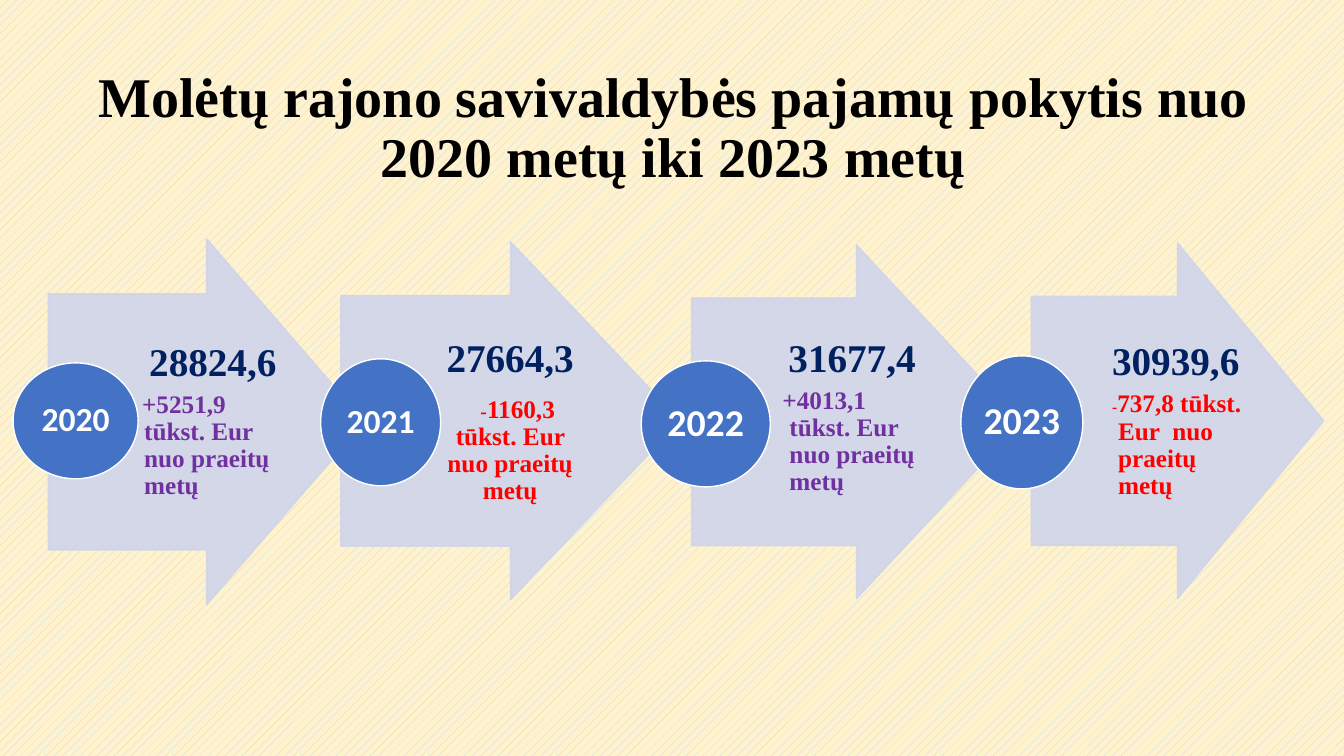
from typing import NamedTuple

import pptx
import pptx.dml.color
import pptx.enum.dml
import pptx.enum.shapes
import pptx.enum.text
import pptx.oxml
import pptx.oxml.ns
import pptx.util

Inches = pptx.util.Inches
Pt = pptx.util.Pt
Align = pptx.enum.text.PP_ALIGN
Kind = pptx.enum.shapes.MSO_SHAPE
Box = tuple[float, float, float, float]
SERIF = "Times New Roman"
UP, DOWN = "7030A0", "FF0000"


class Dent(NamedTuple):
    left: float = 0
    first: float = 0


class Step(NamedTuple):
    year: str
    size: int
    total: str
    sign: str
    change: str
    tone: str
    mark: int
    arrow: Box
    body: Box
    disc: Box
    inset: Box
    head: Dent
    note: Dent
    align: Align
    gap: int


STEPS = [
    Step("2020", 24, "28824,6", "+", "5251,9 tūkst. Eur nuo praeitų metų", UP, 18,
         (0.48, 2.37, 3.14, 3.63), (1.27, 2.91, 1.53, 2.54), (0.13, 3.6, 1.24, 1.15),
         (0.04, 0.01, 0.02, 0.01), Dent(0.17), Dent(0.12, -0.02), Align.LEFT, 5),
    Step("2021", 24, "27664,3", "-", "1160,3 tūkst. Eur nuo praeitų metų", DOWN, 14,
         (3.38, 2.4, 3.37, 3.55), (4.22, 2.94, 1.64, 2.49), (3.18, 3.56, 1.19, 1.26),
         (0.08, 0.02, 0.04, 0.02), Dent(), Dent(0, 0.15), Align.CENTER, 11),
    Step("2022", 27, "31677,4", "+", "4013,1 tūkst. Eur nuo praeitų metų", UP, 18,
         (6.86, 2.43, 3.27, 3.51), (7.67, 2.95, 1.59, 2.46), (6.36, 3.58, 1.28, 1.25),
         (0.04, 0.01, 0.02, 0.09), Dent(0.11), Dent(0.12, -0.07), Align.LEFT, 5),
    Step("2023", 27, "30939,6", "-", "737,8 tūkst. Eur  nuo praeitų metų", DOWN, 11,
         (10.23, 2.41, 2.9, 3.53), (10.95, 2.94, 1.41, 2.47), (9.53, 3.53, 1.21, 1.32),
         (0.08, 0.02, 0.04, 0.02), Dent(), Dent(0.06, -0.06), Align.LEFT, 5),
]


def color(code: str) -> pptx.dml.color.RGBColor:
    return pptx.dml.color.RGBColor.from_string(code)


def style(run, size: int, code: str, face: str = SERIF) -> None:
    font = run.font
    font.size, font.name, font.bold = Pt(size), face, True
    font.color.rgb = color(code)


def place(box: Box) -> list[int]:
    return [Inches(n) for n in box]


def setup(frame, inset: Box) -> None:
    frame.word_wrap = True
    frame.vertical_anchor = pptx.enum.text.MSO_ANCHOR.MIDDLE
    (frame.margin_left, frame.margin_top,
     frame.margin_right, frame.margin_bottom) = place(inset)


def indent(para, dent: Dent) -> None:
    props = para._p.get_or_add_pPr()
    props.set("marL", str(Inches(dent.left)))
    props.set("indent", str(Inches(dent.first)))


def shape(slide, kind: Kind, box: Box, fill: str, line: str):
    item = slide.shapes.add_shape(kind, *place(box))
    item.shadow.inherit = False
    item.fill.solid()
    item.fill.fore_color.rgb = color(fill)
    item.line.color.rgb = color(line)
    item.line.width = Pt(1)
    return item


def arrow(slide, box: Box) -> None:
    item = shape(slide, Kind.RIGHT_ARROW, box, "CFD5EA", "CFD5EA")
    item.adjustments[0], item.adjustments[1] = 0.7, 0.5
    for tone in item._element.spPr.iter(pptx.oxml.ns.qn("a:srgbClr")):
        alpha = pptx.oxml.parse_xml(
            f'<a:alpha {pptx.oxml.ns.nsdecls("a")} val="90000"/>')
        tone.append(alpha)


def body(slide, step: Step) -> None:
    frame = slide.shapes.add_textbox(*place(step.body)).text_frame
    setup(frame, step.inset)
    head, note = frame.paragraphs[0], frame.add_paragraph()
    head.text = step.total
    style(head.runs[0], 28, "002060")
    for text, size in ((step.sign, step.mark), (step.change, 18)):
        run = note.add_run()
        run.text = text
        style(run, size, step.tone)
    for para, dent in ((head, step.head), (note, step.note)):
        para.alignment = step.align
        para.line_spacing = 0.9
        indent(para, dent)
    head.space_after = Pt(step.gap)


def disc(slide, step: Step) -> None:
    frame = shape(slide, Kind.OVAL, step.disc, "4472C4", "FFFFFF").text_frame
    setup(frame, (0.02, 0.02, 0.02, 0.02))
    frame.text = step.year
    para = frame.paragraphs[0]
    para.alignment = Align.CENTER
    para.line_spacing = 0.9
    style(para.runs[0], step.size, "FFFFFF", "Calibri")


def title(slide, text: str) -> None:
    item = slide.shapes.title
    item.left, item.top, item.width, item.height = place((0.53, 0.4, 12.29, 1.77))
    frame = item.text_frame
    frame.text = text
    setup(frame, (0.1, 0.05, 0.1, 0.05))
    para = frame.paragraphs[0]
    para.alignment = Align.CENTER
    para.line_spacing = 0.9
    style(para.runs[0], 40, "000000")


def main() -> None:
    deck = pptx.Presentation()
    deck.slide_width, deck.slide_height = Inches(13.33), Inches(7.5)
    slide = deck.slides.add_slide(deck.slide_layouts[5])
    fill = slide.background.fill
    fill.patterned()
    fill.pattern = pptx.enum.dml.MSO_PATTERN.PERCENT_20
    fill.fore_color.rgb = color("BDD7EE")
    fill.back_color.rgb = color("FFF2CC")
    title(slide, "Molėtų rajono savivaldybės pajamų pokytis nuo 2020 metų iki 2023 metų")
    for step in STEPS:
        arrow(slide, step.arrow)
        body(slide, step)
        disc(slide, step)
    deck.save("out.pptx")


if __name__ == "__main__":
    main()
